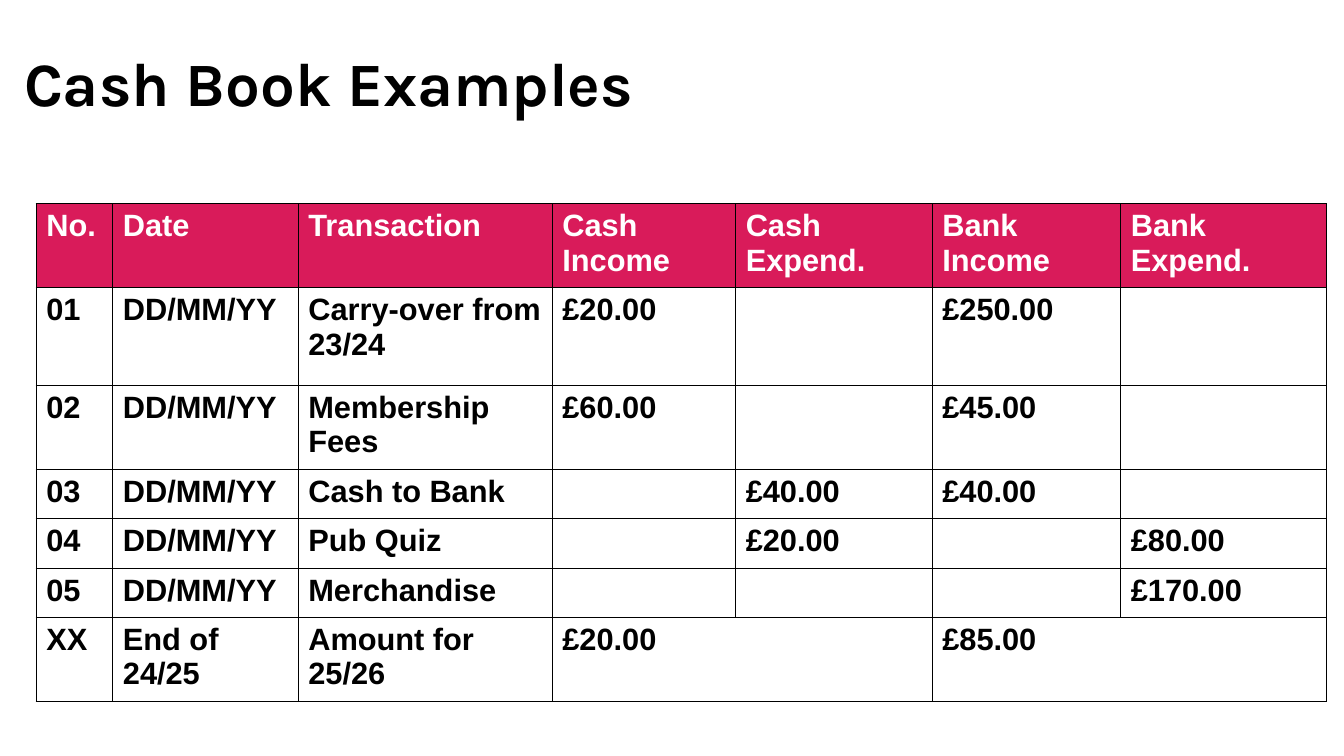
from dataclasses import dataclass

from lxml.etree import SubElement
from pptx import Presentation
from pptx.dml.color import RGBColor
from pptx.enum.text import MSO_ANCHOR
from pptx.oxml.ns import qn
from pptx.table import _Cell as Cell
from pptx.text.text import _Paragraph as Paragraph
from pptx.util import Inches, Pt

BLACK = RGBColor(0x00, 0x00, 0x00)
WHITE = RGBColor(0xFF, 0xFF, 0xFF)
CRIMSON = RGBColor(0xD9, 0x1B, 0x5A)

GRID = Inches(0.1)
SLIDE_COLUMNS, SLIDE_ROWS = 133.33, 75

COLUMN_SPANS = (7.6, 18.4, 25.2, 18.2, 19.5, 18.7, 20.4)
HEADINGS = ("No.", "Date", "Transaction", "Cash Income", "Cash Expend.",
            "Bank Income", "Bank Expend.")
HEADING_ROWS = 5.4

TITLE_FORMAT = {"name": "Karla", "size": Pt(44), "bold": True}
CELL_FORMAT = {"name": "Arial", "size": Pt(22), "bold": True}


@dataclass(frozen=True)
class Entry:
    number: str
    date: str
    transaction: str
    cash_income: str = ""
    cash_expend: str = ""
    bank_income: str = ""
    bank_expend: str = ""
    rows: float = 4.9
    is_balance: bool = False

    def texts(self) -> tuple[str, ...]:
        return (self.number, self.date, self.transaction, self.cash_income,
                self.cash_expend, self.bank_income, self.bank_expend)


ENTRIES = (
    Entry("01", "DD/MM/YY", "Carry-over from 23/24", cash_income="£20.00",
          bank_income="£250.00", rows=9.7),
    Entry("02", "DD/MM/YY", "Membership Fees", cash_income="£60.00",
          bank_income="£45.00"),
    Entry("03", "DD/MM/YY", "Cash to Bank", cash_expend="£40.00",
          bank_income="£40.00"),
    Entry("04", "DD/MM/YY", "Pub Quiz", cash_expend="£20.00",
          bank_expend="£80.00"),
    Entry("05", "DD/MM/YY", "Merchandise", bank_expend="£170.00"),
    Entry("XX", "End of 24/25", "Amount for 25/26", cash_income="£20.00",
          bank_income="£85.00", is_balance=True),
)


def grid(units: float) -> int:
    return round(units * GRID)


def write(paragraph: Paragraph, text: str, style: dict, color: RGBColor) -> None:
    run = paragraph.add_run()
    run.text = text
    for attribute, value in style.items():
        setattr(run.font, attribute, value)
    run.font.color.rgb = color


def draw_borders(cell: Cell) -> None:
    properties = cell._tc.get_or_add_tcPr()
    for side in ("a:lnL", "a:lnR", "a:lnT", "a:lnB"):
        line = SubElement(properties, qn(side), w=str(Pt(1)))
        fill = SubElement(line, qn("a:solidFill"))
        SubElement(fill, qn("a:srgbClr"), val=str(BLACK))


def add_title(slide) -> None:
    box = slide.shapes.add_textbox(grid(1.4), grid(1.3), grid(62.7), grid(14.5))
    frame = box.text_frame
    frame.word_wrap = True
    frame.vertical_anchor = MSO_ANCHOR.MIDDLE
    heading = frame.paragraphs[0]
    heading.line_spacing = 0.9
    write(heading, "Cash Book Examples", TITLE_FORMAT, BLACK)


def add_cash_book(slide) -> None:
    lines = (HEADINGS, *(entry.texts() for entry in ENTRIES))
    row_spans = (HEADING_ROWS, *(entry.rows for entry in ENTRIES))
    book = slide.shapes.add_table(
        len(lines), len(HEADINGS), grid(3.6), grid(20.2),
        grid(sum(COLUMN_SPANS)), grid(sum(row_spans))).table
    book.horz_banding = False
    for column, span in zip(book.columns, COLUMN_SPANS):
        column.width = grid(span)
    for row, span in zip(book.rows, row_spans):
        row.height = grid(span)

    for r, texts in enumerate(lines):
        for c, text in enumerate(texts):
            cell = book.cell(r, c)
            draw_borders(cell)
            if r == 0:
                cell.fill.solid()
                cell.fill.fore_color.rgb = CRIMSON
            else:
                cell.fill.background()
            if text:
                write(cell.text_frame.paragraphs[0], text, CELL_FORMAT,
                      BLACK if r else WHITE)

    for r, entry in enumerate(ENTRIES, start=1):
        if entry.is_balance:
            for income in (3, 5):
                book.cell(r, income).merge(book.cell(r, income + 1))


def main() -> None:
    deck = Presentation()
    deck.slide_width = grid(SLIDE_COLUMNS)
    deck.slide_height = grid(SLIDE_ROWS)
    slide = deck.slides.add_slide(deck.slide_layouts[6])
    add_title(slide)
    add_cash_book(slide)
    deck.save("out.pptx")


if __name__ == "__main__":
    main()
